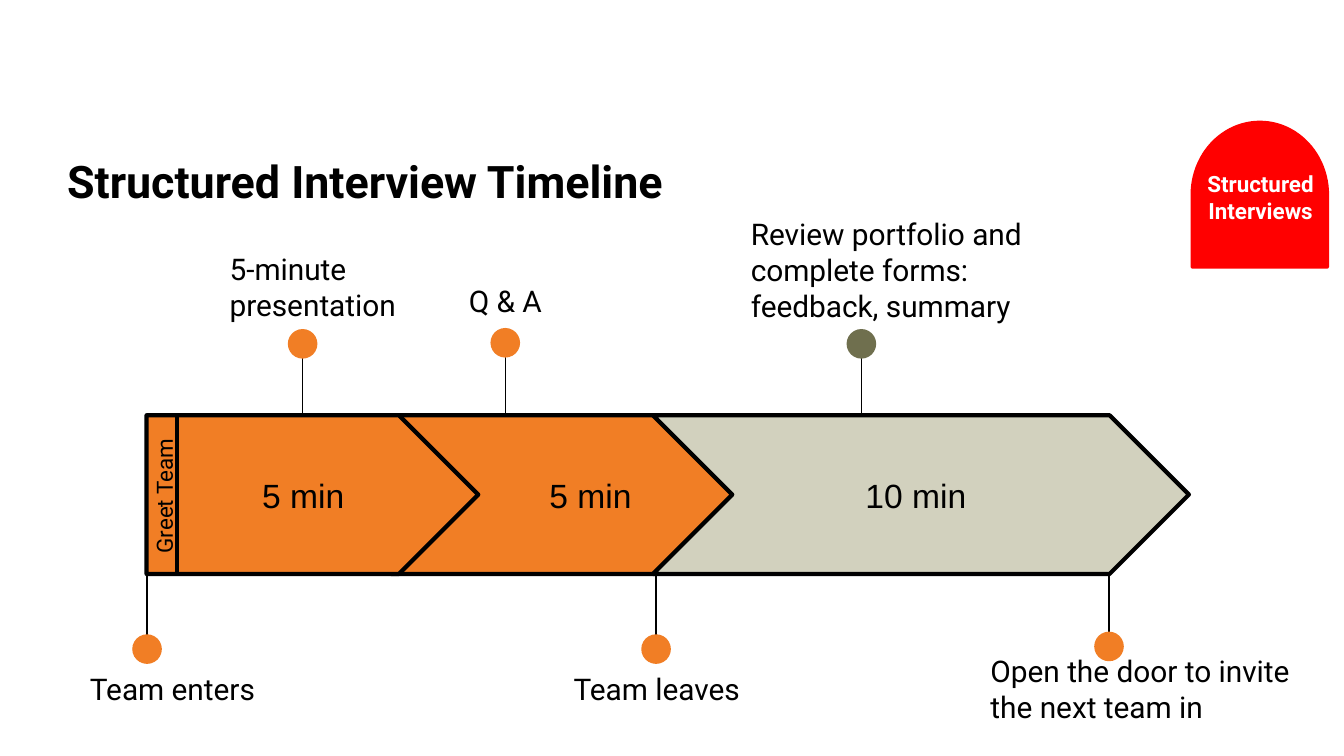
from dataclasses import dataclass

from lxml.etree import SubElement
from pptx import Presentation
from pptx.dml.color import RGBColor
from pptx.enum.shapes import MSO_CONNECTOR, MSO_SHAPE
from pptx.enum.text import MSO_ANCHOR, PP_ALIGN
from pptx.oxml.ns import qn
from pptx.util import Cm, Pt

COLORS = {
    "ink": "000000",
    "orange": "F17E25",
    "sand": "D2D1BE",
    "olive": "6F6F4E",
    "red": "FF0000",
    "white": "FFFFFF",
}
FORMATS = {
    "title": {"name": "Roboto", "size": Pt(24), "bold": True},
    "duration": {"name": "Arial", "size": Pt(18)},
    "label": {"name": "Roboto", "size": Pt(16)},
    "greeting": {"name": "Roboto", "size": Pt(12)},
    "badge": {"name": "Roboto", "size": Pt(12), "bold": True},
}
BAR_TOP, BAR_HEIGHT = 7.85, 3.0
BAR_BOTTOM = BAR_TOP + BAR_HEIGHT
DOT = 0.56


@dataclass
class Box:
    """Left, top, width and height in centimetres."""
    left: float
    top: float
    width: float
    height: float

    def lengths(self) -> list:
        return [Cm(v) for v in (self.left, self.top, self.width, self.height)]


@dataclass
class Phase:
    kind: MSO_SHAPE
    left: float
    width: float
    color: str
    duration: str
    duration_left: float


@dataclass
class Event:
    """A pin whose dot is centred on x, dot_y, with its label."""
    x: float
    dot_y: float
    color: str
    text: str
    label: Box


PHASES = [
    Phase(MSO_SHAPE.CHEVRON, 7.39, 6.48, "orange", "5 min", 9.27),
    Phase(MSO_SHAPE.PENTAGON, 2.77, 6.27, "orange", "5 min", 3.84),
    Phase(MSO_SHAPE.CHEVRON, 12.34, 10.13, "sand", "10 min", 15.42),
]
EVENTS = [
    Event(2.78, 12.27, "orange", "Team enters", Box(1.45, 12.55, 4.11, 0.94)),
    Event(5.72, 6.5, "orange", "5-minute presentation", Box(4.09, 4.62, 4.11, 2.31)),
    Event(9.55, 6.48, "orange", "Q & A", Box(8.61, 5.21, 2.11, 1.63)),
    Event(12.4, 12.27, "orange", "Team leaves", Box(10.59, 12.55, 4.11, 0.94)),
    Event(20.96, 12.22, "orange", "Open the door to invite the next team in",
          Box(18.47, 12.22, 6.17, 1.63)),
    Event(16.28, 6.5, "olive", "Review portfolio and complete forms: feedback, summary",
          Box(13.94, 3.96, 5.99, 2.31)),
]


def rgb(color: str) -> RGBColor:
    return RGBColor.from_string(COLORS[color])


def add_figure(slide, kind: MSO_SHAPE, box: Box, fill: str, outline: str = ""):
    figure = slide.shapes.add_shape(kind, *box.lengths())
    figure.shadow.inherit = False
    figure.fill.solid()
    figure.fill.fore_color.rgb = rgb(fill)
    if outline:
        figure.line.color.rgb = rgb(outline)
        figure.line.width = Pt(2.25)
    else:
        figure.line.fill.background()
    return figure


def add_rule(slide, x: float, start: float, end: float, weight: float) -> None:
    """Draw a vertical line."""
    rule = slide.shapes.add_connector(MSO_CONNECTOR.STRAIGHT, Cm(x), Cm(start), Cm(x), Cm(end))
    rule.line.color.rgb = rgb("ink")
    rule.line.width = Pt(weight)
    SubElement(rule._element.spPr, qn("a:effectLst"))


def add_text(slide, text: str, box: Box, style: str, color: str = "ink",
             align: PP_ALIGN = PP_ALIGN.LEFT):
    holder = slide.shapes.add_textbox(*box.lengths())
    holder.text_frame.word_wrap = True
    paragraph = holder.text_frame.paragraphs[0]
    paragraph.alignment = align
    run = paragraph.add_run()
    run.text = text
    run.font.color.rgb = rgb(color)
    for attribute, value in FORMATS[style].items():
        setattr(run.font, attribute, value)
    return holder


def add_title(slide) -> None:
    title = add_text(slide, "Structured Interview Timeline", Box(1.27, 2.64, 23.04, 1.55), "title")
    frame = title.text_frame
    frame.vertical_anchor = MSO_ANCHOR.MIDDLE
    for side in ("left", "top", "right", "bottom"):
        setattr(frame, f"margin_{side}", 0)


def add_phases(slide) -> None:
    for phase in PHASES:
        box = Box(phase.left, BAR_TOP, phase.width, BAR_HEIGHT)
        add_figure(slide, phase.kind, box, phase.color, "ink")
    for phase in PHASES:
        box = Box(phase.duration_left, 8.86, 3.78, 1.02)
        add_text(slide, phase.duration, box, "duration", align=PP_ALIGN.CENTER)


def add_event(slide, event: Event) -> None:
    bar_edge = BAR_TOP if event.dot_y < BAR_TOP else BAR_BOTTOM
    add_rule(slide, event.x, event.dot_y, bar_edge, 0.75)
    dot = Box(event.x - DOT / 2, event.dot_y - DOT / 2, DOT, DOT)
    add_figure(slide, MSO_SHAPE.OVAL, dot, event.color)
    add_text(slide, event.text, event.label, "label")


def add_greeting(slide) -> None:
    add_rule(slide, 3.35, BAR_TOP, BAR_BOTTOM, 2.25)
    greeting = add_text(slide, "Greet Team", Box(1.3, 8.74, 4.11, 1.27), "greeting",
                        align=PP_ALIGN.CENTER)
    greeting.rotation = 270


def add_badge(slide) -> None:
    badge = add_figure(slide, MSO_SHAPE.FLOWCHART_DELAY, Box(22.45, 2.41, 2.72, 2.54),
                       "red", "red")
    badge.rotation = 270
    add_text(slide, "Structured Interviews", Box(22.48, 3.1, 2.69, 1.27), "badge", "white",
             PP_ALIGN.CENTER)


def main() -> None:
    deck = Presentation()
    deck.slide_width, deck.slide_height = Cm(25.4), Cm(14.29)
    slide = deck.slides.add_slide(deck.slide_layouts[6])
    add_title(slide)
    add_phases(slide)
    for event in EVENTS:
        add_event(slide, event)
    add_greeting(slide)
    add_badge(slide)
    deck.save("out.pptx")


if __name__ == "__main__":
    main()
